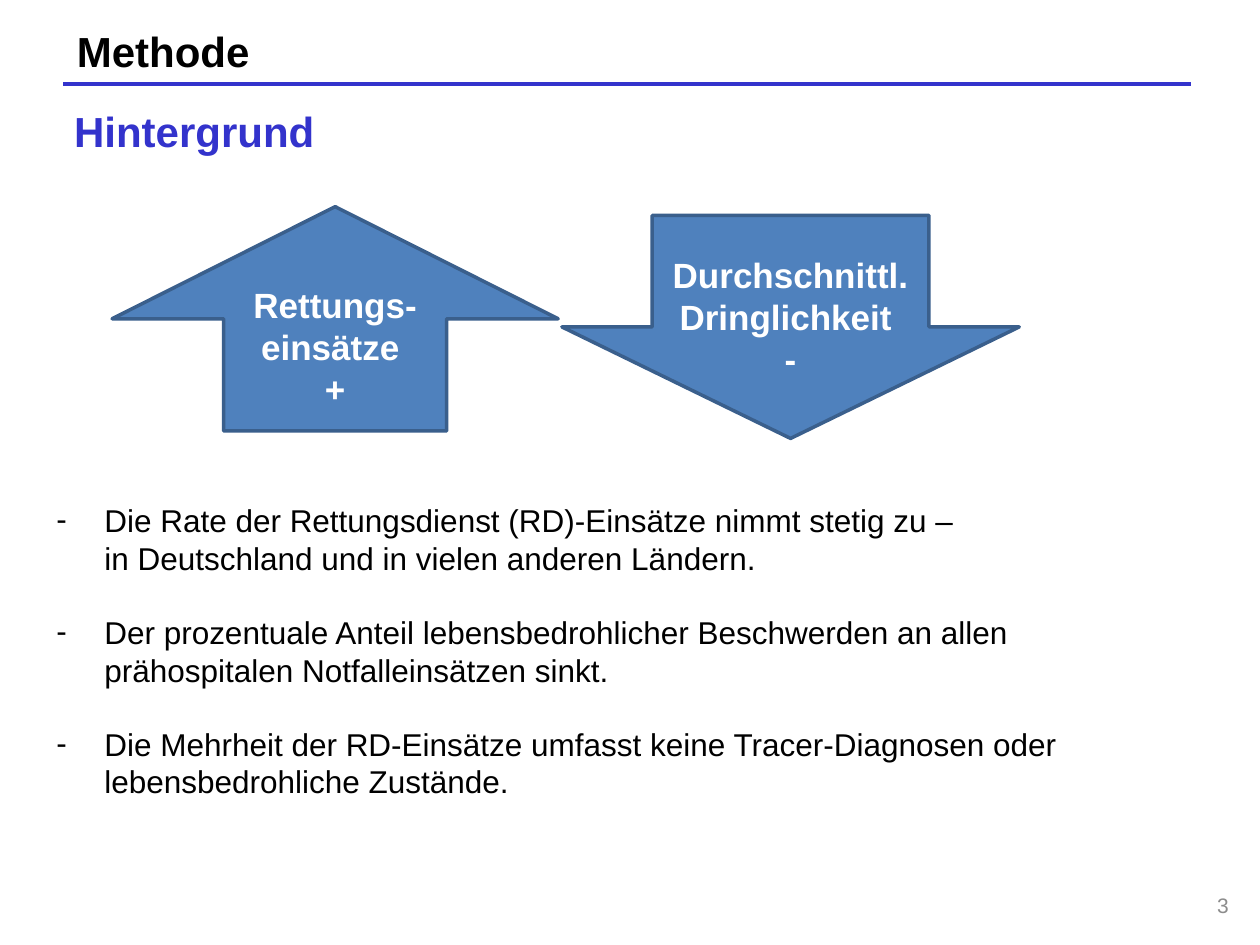
import pptx
import pptx.util
import pptx.dml.color
import pptx.enum.shapes
import pptx.enum.text
import pptx.oxml
import pptx.oxml.ns
from dataclasses import dataclass

Align = pptx.enum.text.PP_ALIGN
Anchor = pptx.enum.text.MSO_ANCHOR
ArrowKind = pptx.enum.shapes.MSO_SHAPE

# The slide is a grid of 100 columns by 75 rows
COLUMNS, ROWS = 100, 75
CELL = pptx.util.Inches(0.1)


@dataclass(frozen=True)
class Theme:
    font: str = "Arial"
    black: str = "000000"
    white: str = "FFFFFF"
    accent: str = "3333CC"
    grey: str = "8C8C8C"
    arrow_fill: str = "4F81BD"
    arrow_edge: str = "3A5F8C"
    heading: int = 24
    arrow_label: int = 20
    body: int = 18
    page_number: int = 12


THEME = Theme()

FINDINGS = [
    "Die Rate der Rettungsdienst (RD)-Einsätze nimmt stetig zu – \v"
    "in Deutschland und in vielen anderen Ländern.",
    "Der prozentuale Anteil lebensbedrohlicher Beschwerden an allen "
    "prähospitalen Notfalleinsätzen sinkt.",
    "Die Mehrheit der RD-Einsätze umfasst keine Tracer-Diagnosen oder "
    "lebensbedrohliche Zustände.",
]


def grid(*cells):
    return [round(CELL * cell) for cell in cells]


def rgb(colour):
    return pptx.dml.color.RGBColor.from_string(colour)


def style_text(frame, size, colour, bold=False, align=Align.LEFT, anchor=Anchor.TOP):
    frame.word_wrap = True
    frame.vertical_anchor = anchor
    for paragraph in frame.paragraphs:
        paragraph.alignment = align
        for run in paragraph.runs:
            run.font.name = THEME.font
            run.font.size = pptx.util.Pt(size)
            run.font.bold = bold
            run.font.color.rgb = rgb(colour)


def add_title(slide, text, area):
    title = slide.shapes.title
    title.left, title.top, title.width, title.height = grid(*area)
    title.text_frame.text = text
    title.text_frame.auto_size = pptx.enum.text.MSO_AUTO_SIZE.NONE
    style_text(title.text_frame, THEME.heading, THEME.black, bold=True)


def add_text(slide, text, area, size, colour, **style):
    frame = slide.shapes.add_textbox(*grid(*area)).text_frame
    frame.text = text
    style_text(frame, size, colour, **style)
    return frame


def add_rule(slide, left, right, row):
    rule = slide.shapes.add_connector(
        pptx.enum.shapes.MSO_CONNECTOR.STRAIGHT, *grid(left, row, right, row))
    rule.line.color.rgb = rgb(THEME.accent)
    rule.line.width = pptx.util.Pt(2.25)
    rule._element.spPr.append(pptx.oxml.parse_xml(
        f"<a:effectLst {pptx.oxml.ns.nsdecls('a')}/>"))


def add_arrow(slide, kind, text, area, shaft_share=0.5, text_drop=0.5):
    arrow = slide.shapes.add_shape(kind, *grid(*area))
    arrow.adjustments[0] = shaft_share
    arrow.shadow.inherit = False
    arrow.fill.solid()
    arrow.fill.fore_color.rgb = rgb(THEME.arrow_fill)
    arrow.line.color.rgb = rgb(THEME.arrow_edge)
    arrow.line.width = pptx.util.Pt(2)
    arrow.text_frame.text = text
    arrow.text_frame.margin_top = grid(text_drop)[0]
    style_text(arrow.text_frame, THEME.arrow_label, THEME.white, bold=True,
               align=Align.CENTER, anchor=Anchor.MIDDLE)


def add_findings(slide, findings, area):
    frame = add_text(slide, "\n".join(findings), area, THEME.body, THEME.black,
                     anchor=Anchor.BOTTOM)
    indent = grid(3.8)[0]
    for index, paragraph in enumerate(frame.paragraphs):
        properties = paragraph._p.get_or_add_pPr()
        properties.set("marL", str(indent))
        properties.set("indent", str(-indent))
        for bullet in (f'buFont {pptx.oxml.ns.nsdecls("a")} typeface="{THEME.font}"',
                       f'buChar {pptx.oxml.ns.nsdecls("a")} char="-"'):
            properties.append(pptx.oxml.parse_xml(f"<a:{bullet}/>"))
        if index:
            # One line of body text between findings
            paragraph.space_before = pptx.util.Pt(THEME.body * 1.15)


def main():
    deck = pptx.Presentation()
    deck.slide_width, deck.slide_height = grid(COLUMNS, ROWS)
    slide = deck.slides.add_slide(deck.slide_layouts[5])

    # Header
    add_rule(slide, 5, 94.5, 6.7)
    add_title(slide, "Methode", (5.1, 1.5, 58.5, 5))
    add_text(slide, "Hintergrund", (4.9, 7.9, 43.3, 5),
             THEME.heading, THEME.accent, bold=True)

    # Findings
    add_findings(slide, FINDINGS, (3.5, 20.2, 90.6, 43.8))

    # Opposing trends
    add_arrow(slide, ArrowKind.UP_ARROW, "Rettungs-einsätze \v+",
              (8.9, 16.4, 35.4, 17.8))
    add_arrow(slide, ArrowKind.DOWN_ARROW, "Durchschnittl. Dringlichkeit \v-",
              (44.6, 17.1, 36.3, 17.7), shaft_share=0.605, text_drop=4.2)

    # Page number
    add_text(slide, "3", (75.2, 69.8, 23.3, 4), THEME.page_number, THEME.grey,
             align=Align.RIGHT, anchor=Anchor.MIDDLE)

    deck.save("out.pptx")


if __name__ == "__main__":
    main()
